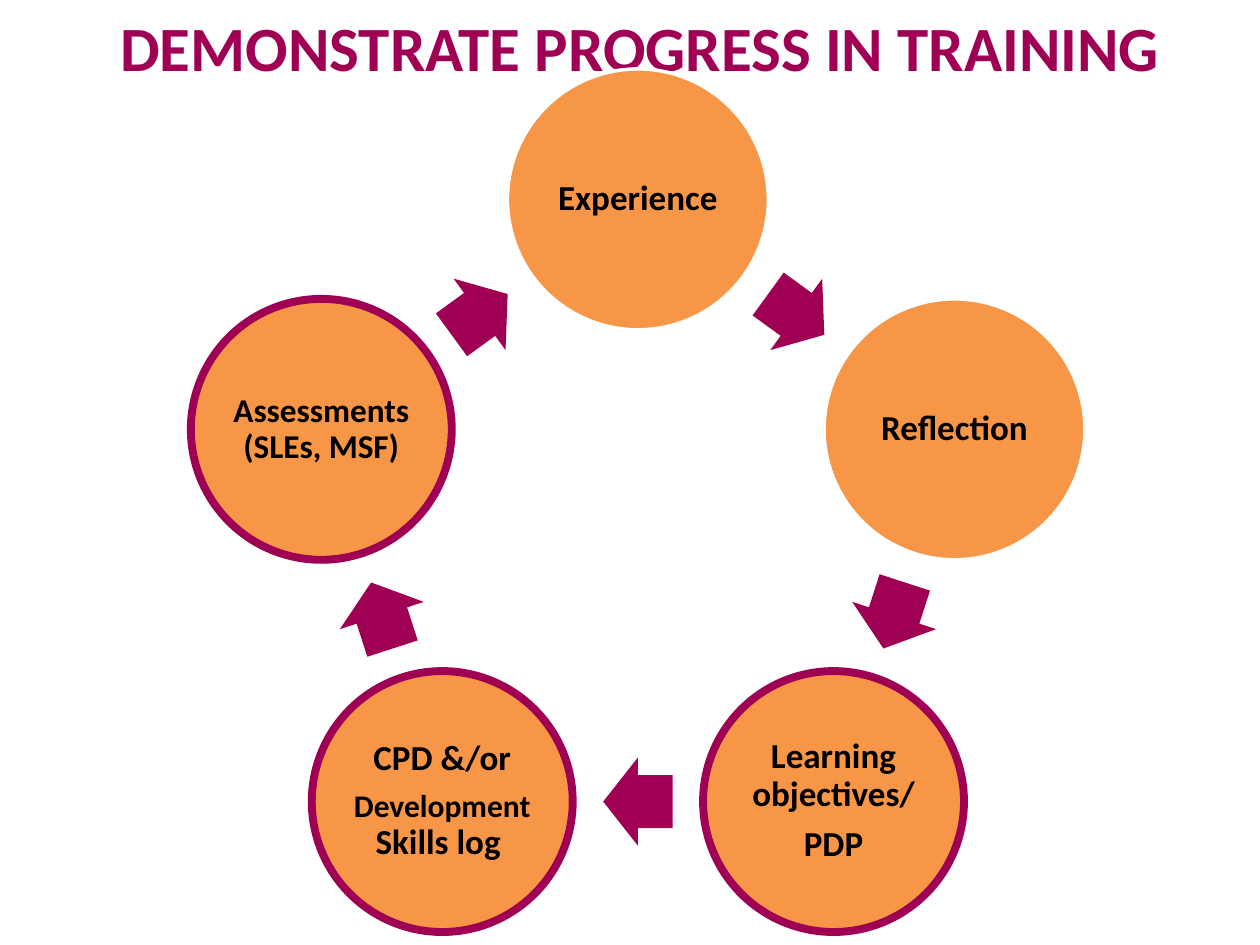
from dataclasses import dataclass
from math import cos, pi, radians, sin

from pptx import Presentation
from pptx.dml.color import RGBColor as RGB
from pptx.enum.shapes import MSO_SHAPE as Shape
from pptx.enum.text import MSO_ANCHOR as Anchor, PP_ALIGN as Align
from pptx.util import Cm, Pt


@dataclass(frozen=True)
class Theme:
    font: str = "Calibri"
    plum: RGB = RGB(0xA0, 0x00, 0x54)
    orange: RGB = RGB(0xF7, 0x96, 0x46)
    white: RGB = RGB(0xFF, 0xFF, 0xFF)
    black: RGB = RGB(0x00, 0x00, 0x00)
    head: float = 36
    body: float = 20
    fit: float = 19
    small: float = 18
    thin: float = 2
    thick: float = 4.5


T = Theme()

# Centre and radius of the ring, then the sizes of its parts, in cm
MID_X, MID_Y, RING = 12.86, 10.73, 6.71
DISC = 5.26
LONG, WIDE = 1.4, 1.78

# Each stage: paragraphs, text size of each run, outlined in plum
STAGES = [
    (["Experience"], [T.body], False),
    (["Reflection"], [T.body], False),
    (["Learning objectives/", "PDP"], [T.body, T.body], True),
    (["CPD &/or", "Development\vSkills log "], [T.body, T.small, T.body], True),
    (["Assessments (SLEs, MSF)"], [T.fit], True),
]


def style(run, size, color):
    font = run.font
    font.name, font.size, font.bold = T.font, Pt(size), True
    font.color.rgb = color


def add_title(slide, text):
    box = slide.shapes.add_textbox(Cm(1.27), 0, Cm(23.55), Cm(1.88))
    frame = box.text_frame
    frame.word_wrap = True
    frame.vertical_anchor = Anchor.MIDDLE
    frame.text = text
    para = frame.paragraphs[0]
    para.alignment = Align.CENTER
    style(para.runs[0], T.head, T.plum)


def add_part(slide, kind, angle, reach, width, height, fill):
    """Place a shape on the ring, at an angle clockwise from the top."""
    turn = radians(angle)
    left = MID_X + reach * sin(turn) - width / 2
    top = MID_Y - reach * cos(turn) - height / 2
    part = slide.shapes.add_shape(kind, Cm(left), Cm(top), Cm(width), Cm(height))
    part.shadow.inherit = False
    part.fill.solid()
    part.fill.fore_color.rgb = fill
    return part


def add_stage(slide, angle, lines, sizes, outlined):
    disc = add_part(slide, Shape.OVAL, angle, RING, DISC, DISC, T.orange)
    disc.line.color.rgb = T.plum if outlined else T.white
    disc.line.width = Pt(T.thick if outlined else T.thin)

    frame = disc.text_frame
    frame.word_wrap = True
    frame.vertical_anchor = Anchor.MIDDLE
    frame.margin_left = frame.margin_right = 0
    frame.margin_top = frame.margin_bottom = Cm(0.08)
    frame.text = "\n".join(lines)
    for para in frame.paragraphs:
        para.alignment = Align.CENTER
        para.line_spacing = 0.9
        para.space_after = Pt(7)
    runs = [run for para in frame.paragraphs for run in para.runs]
    for run, size in zip(runs, sizes):
        style(run, size, T.black)


def add_arrow(slide, angle, step):
    """Point from one stage to the next, halfway along the chord."""
    reach = RING * cos(radians(step / 2))
    arrow = add_part(slide, Shape.RIGHT_ARROW, angle, reach, LONG, WIDE, T.plum)
    arrow.line.fill.background()
    arrow.adjustments[0] = 0.6
    arrow.adjustments[1] = 0.5
    arrow.rotation = angle


def main():
    deck = Presentation()
    deck.slide_width, deck.slide_height = Cm(25.4), Cm(19.05)
    slide = deck.slides.add_slide(deck.slide_layouts[6])

    add_title(slide, "DEMONSTRATE PROGRESS IN TRAINING ")
    step = 360 / len(STAGES)
    for i, (lines, sizes, outlined) in enumerate(STAGES):
        add_stage(slide, i * step, lines, sizes, outlined)
        add_arrow(slide, (i + 0.5) * step, step)

    deck.save("out.pptx")


if __name__ == "__main__":
    main()
